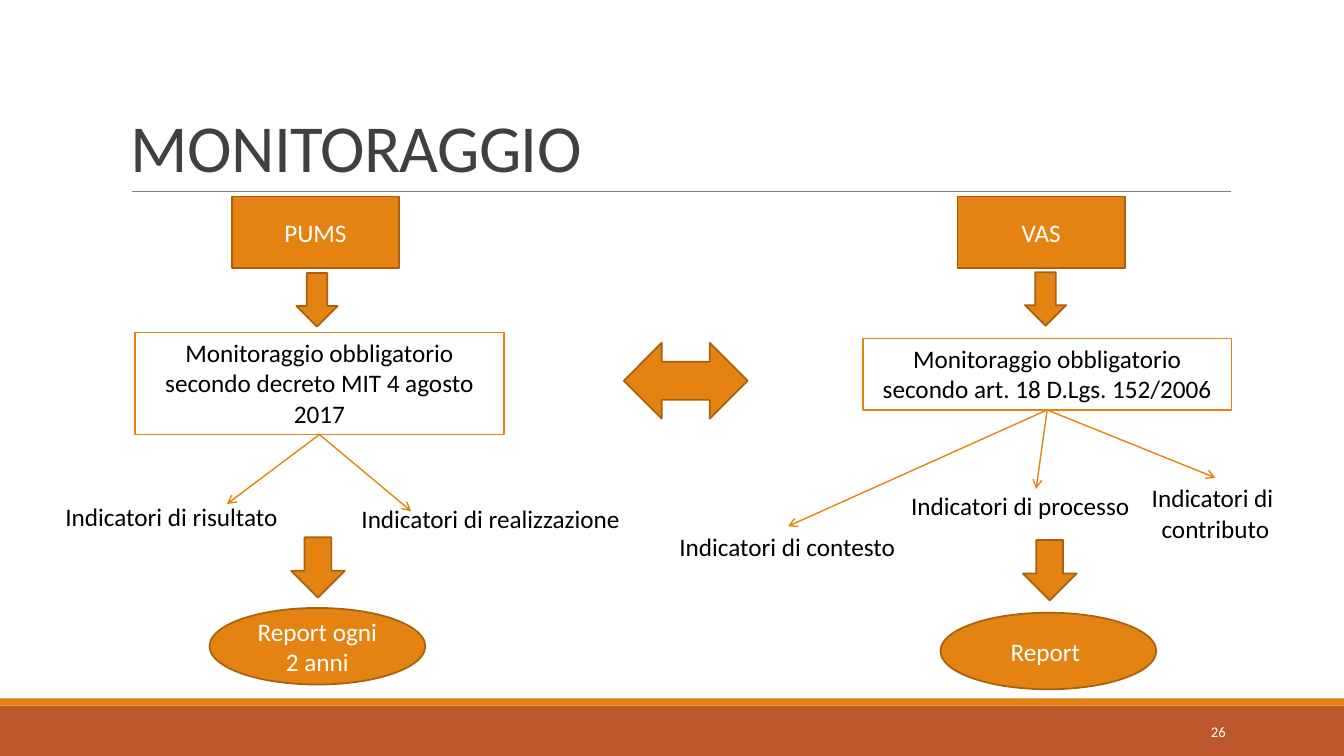
from lxml.etree import SubElement
from pptx import Presentation
from pptx.dml.color import RGBColor
from pptx.enum.shapes import MSO_CONNECTOR as Connector, MSO_SHAPE as Shape
from pptx.enum.text import MSO_ANCHOR as Anchor, PP_ALIGN as Align
from pptx.oxml.ns import qn
from pptx.util import Cm, Pt

ORANGE = RGBColor(0xE4, 0x83, 0x12)
DARK_ORANGE = RGBColor(0xA9, 0x61, 0x0D)
RUST = RGBColor(0xBD, 0x58, 0x2C)
GRAY = RGBColor(0x80, 0x80, 0x80)
DARK_GRAY = RGBColor(0x40, 0x40, 0x40)
BLACK = RGBColor(0, 0, 0)
WHITE = RGBColor(0xFF, 0xFF, 0xFF)

SLIDE_WIDTH, SLIDE_HEIGHT = 33.87, 19.05


class SlideBuilder:
    """Draws styled elements on one slide; all lengths are in centimetres."""

    font = "Calibri"
    size = 18

    def __init__(self, slide):
        self.slide = slide

    def set_text(self, shape, text, color, size=None, align=Align.CENTER, anchor=Anchor.MIDDLE):
        frame = shape.text_frame
        frame.text = text
        frame.vertical_anchor = anchor
        for paragraph in frame.paragraphs:
            paragraph.alignment = align
            for run in paragraph.runs:
                run.font.name = self.font
                run.font.size = Pt(size or self.size)
                run.font.color.rgb = color

    def shape(self, kind, left, top, width, height, text="", fill=ORANGE,
              line=DARK_ORANGE, color=WHITE, anchor=Anchor.MIDDLE):
        shape = self.slide.shapes.add_shape(kind, Cm(left), Cm(top), Cm(width), Cm(height))
        shape.shadow.inherit = False
        shape.fill.solid()
        shape.fill.fore_color.rgb = fill
        if line is None:
            shape.line.fill.background()
        else:
            shape.line.color.rgb = line
            shape.line.width = Pt(1.25)
        if text:
            self.set_text(shape, text, color, anchor=anchor)

    def text(self, left, top, width, height, text, color=BLACK, size=None,
             align=Align.LEFT, anchor=Anchor.TOP, wrap=False):
        box = self.slide.shapes.add_textbox(Cm(left), Cm(top), Cm(width), Cm(height))
        box.text_frame.word_wrap = wrap
        self.set_text(box, text, color, size, align, anchor)
        return box

    def line(self, start, end, color=ORANGE, width=1, arrow=True):
        points = [Cm(value) for value in (*start, *end)]
        connector = self.slide.shapes.add_connector(Connector.STRAIGHT, *points)
        connector.line.color.rgb = color
        connector.line.width = Pt(width)
        properties = connector._element.spPr
        if arrow:
            SubElement(properties.find(qn("a:ln")), qn("a:tailEnd"), type="arrow")
        SubElement(properties, qn("a:effectLst"))

    def title(self, text):
        box = self.text(3.05, 0.79, 27.94, 4.04, text, DARK_GRAY, 48,
                        anchor=Anchor.BOTTOM, wrap=True)
        paragraph = box.text_frame.paragraphs[0]
        paragraph.line_spacing = 0.85
        paragraph.runs[0]._r.get_or_add_rPr().set("spc", "-50")


def draw_frame(builder):
    """Footer bands, title with its rule, and slide number."""
    builder.shape(Shape.RECTANGLE, 0, 17.78, SLIDE_WIDTH, 1.27, fill=RUST, line=None)
    builder.shape(Shape.RECTANGLE, 0, 17.6, SLIDE_WIDTH, 0.18, line=None)
    builder.line((3.33, 4.83), (31.01, 4.83), GRAY, 0.5, arrow=False)
    builder.title("MONITORAGGIO")
    builder.text(27.51, 17.93, 3.63, 1.02, "26", WHITE, 10.5, Align.RIGHT, Anchor.MIDDLE, True)


def draw_process(builder, heading, first_arrow, rule, indicators, second_arrow, report):
    """One column, from its heading down to its report."""
    left, text = heading
    builder.shape(Shape.RECTANGLE, left, 4.95, 4.22, 1.8, text)
    builder.shape(Shape.DOWN_ARROW, *first_arrow, 1.04, 1.35)

    left, top, height, text = rule
    width = 9.3
    builder.shape(Shape.RECTANGLE, left, top, width, height, text,
                  WHITE, ORANGE, BLACK, Anchor.TOP)
    for target, label_box, label, align in indicators:
        builder.line((left + width / 2, top + height), target)
        builder.text(*label_box, label, align=align)

    builder.shape(Shape.DOWN_ARROW, *second_arrow, 1.35, 1.52)
    left, top, text = report
    builder.shape(Shape.OVAL, left, top, 5.44, 1.93, text)


def main():
    presentation = Presentation()
    presentation.slide_width = Cm(SLIDE_WIDTH)
    presentation.slide_height = Cm(SLIDE_HEIGHT)
    builder = SlideBuilder(presentation.slides.add_slide(presentation.slide_layouts[6]))

    draw_frame(builder)
    draw_process(
        builder,
        heading=(5.84, "PUMS"),
        first_arrow=(7.47, 6.88),
        rule=(3.4, 8.38, 2.57, "Monitoraggio obbligatorio secondo decreto MIT 4 agosto 2017"),
        indicators=[
            ((5.72, 12.7), (1.4, 12.5, 5.92, 1.02), "Indicatori di risultato", Align.LEFT),
            ((10.36, 12.88), (8.86, 12.55, 7.09, 1.02), "Indicatori di realizzazione", Align.LEFT),
        ],
        second_arrow=(7.34, 13.54),
        report=(5.28, 15.32, "Report ogni 2 anni"),
    )
    draw_process(
        builder,
        heading=(24.13, "VAS"),
        first_arrow=(25.83, 6.86),
        rule=(21.74, 8.53, 1.8, "Monitoraggio obbligatorio secondo art. 18 D.Lgs. 152/2006"),
        indicators=[
            ((30.63, 12.04), (28.75, 12.04, 3.76, 1.8), "Indicatori di \ncontributo", Align.CENTER),
            ((19.86, 13.26), (16.87, 13.26, 6.02, 1.02), "Indicatori di contesto", Align.LEFT),
            ((26.11, 12.32), (22.71, 12.24, 6.07, 1.02), "Indicatori di processo", Align.LEFT),
        ],
        second_arrow=(25.78, 13.61),
        report=(23.7, 15.44, "Report "),
    )
    builder.shape(Shape.LEFT_RIGHT_ARROW, 15.72, 8.64, 3.12, 1.91)

    presentation.save("out.pptx")


if __name__ == "__main__":
    main()
